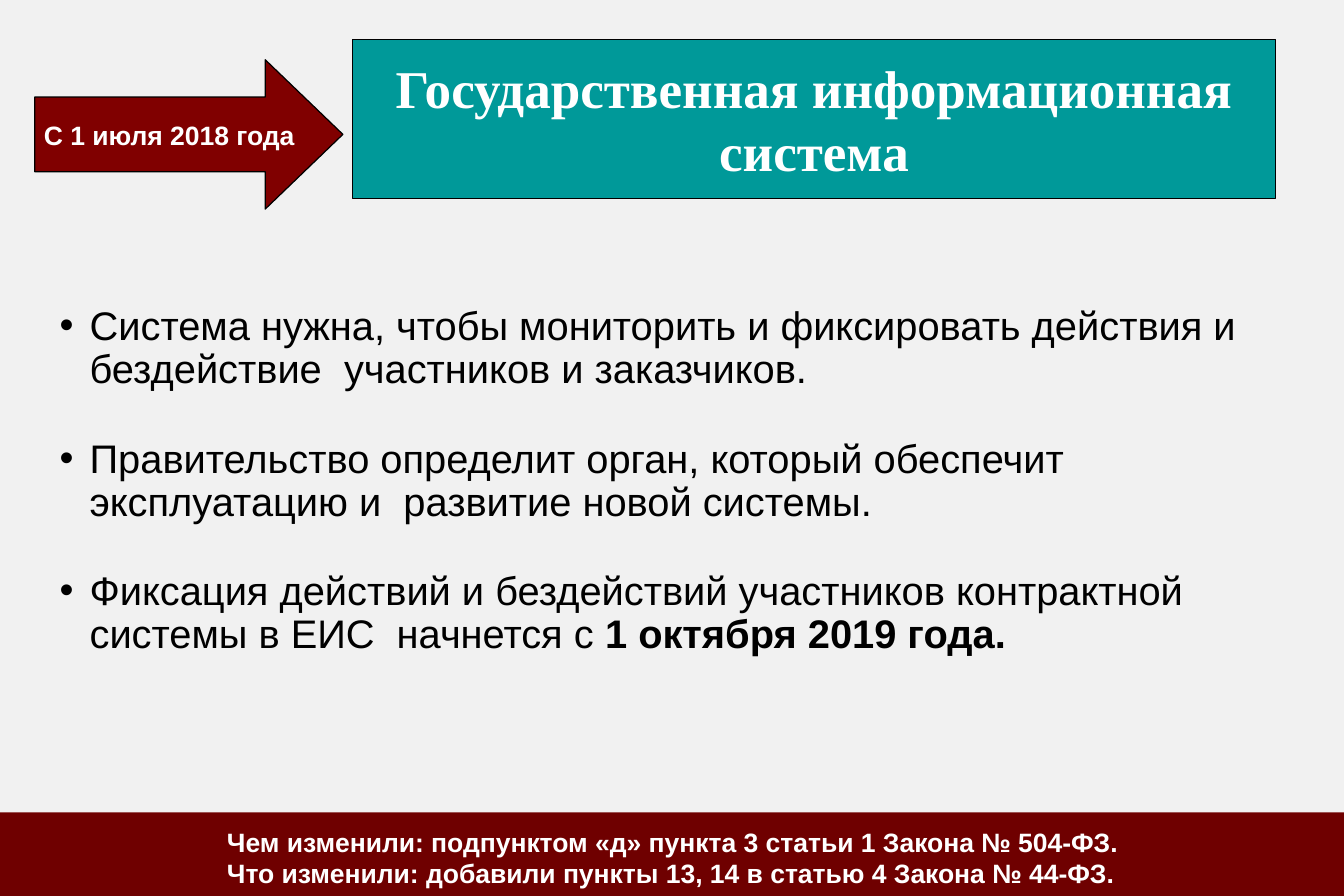
import dataclasses

import lxml.etree
import pptx
import pptx.dml.color
import pptx.enum.shapes
import pptx.enum.text
import pptx.oxml.ns
import pptx.util

Inches = pptx.util.Inches
Pt = pptx.util.Pt
qn = pptx.oxml.ns.qn
ALIGN = pptx.enum.text.PP_ALIGN
ANCHOR = pptx.enum.text.MSO_ANCHOR
SHAPE = pptx.enum.shapes.MSO_SHAPE

COLOURS = {
    "background": "F1F1F1",
    "footer": "6F0000",
    "title": "009999",
    "arrow": "800000",
    "black": "000000",
    "white": "FFFFFF",
}


@dataclasses.dataclass(frozen=True)
class Box:
    left: float
    top: float
    width: float
    height: float


@dataclasses.dataclass(frozen=True)
class Bullet:
    text: str
    space_before: float
    bold_ending: str = ""


TITLE_BOX = Box(2.95, 0.33, 7.73, 1.33)
ARROW_BOX = Box(0.29, 0.5, 2.58, 1.25)
BODY_BOX = Box(0.49, 2.5, 10.41, 3.02)
FOOTER_BOX = Box(0, 6.8, 11.25, 0.7)
FOOTER_TEXT_BOX = Box(1.9, 6.89, 8.44, 0.55)

BULLETS = [
    Bullet("Система нужна, чтобы мониторить и фиксировать действия и "
           "бездействие  участников и заказчиков.", 4.2),
    Bullet("Правительство определит орган, который обеспечит "
           "эксплуатацию и  развитие новой системы.", 28.1),
    Bullet("Фиксация действий и бездействий участников контрактной "
           "системы в ЕИС  начнется с ", 27.6, "1 октября 2019 года."),
]
FOOTER_LINES = [
    "Чем изменили: подпунктом «д» пункта 3 статьи 1 Закона № 504-ФЗ.",
    "Что изменили: добавили пункты 13, 14 в статью 4 Закона № 44-ФЗ.",
]


def colour(name: str) -> pptx.dml.color.RGBColor:
    return pptx.dml.color.RGBColor.from_string(COLOURS[name])


def place(shape, box: Box) -> None:
    shape.left, shape.top = Inches(box.left), Inches(box.top)
    shape.width, shape.height = Inches(box.width), Inches(box.height)


def paint(shape, fill: str, outlined: bool = True) -> None:
    shape.fill.solid()
    shape.fill.fore_color.rgb = colour(fill)
    if outlined:
        shape.line.color.rgb = colour("black")
        shape.line.width = Pt(0.75)
    else:
        shape.line.fill.background()


def add_shape(slide, kind, box: Box, fill: str, outlined: bool = True):
    shape = slide.shapes.add_shape(
        kind, Inches(box.left), Inches(box.top), Inches(box.width), Inches(box.height))
    shape.shadow.inherit = False
    paint(shape, fill, outlined)
    return shape


def prepare_frame(frame, anchor, wrap: bool = True, top_margin: float | None = None) -> None:
    """Set the frame's layout; a given top margin makes the other margins zero."""
    frame.auto_size = pptx.enum.text.MSO_AUTO_SIZE.NONE
    frame.word_wrap = wrap
    frame.vertical_anchor = anchor
    if top_margin is not None:
        frame.margin_left = frame.margin_right = frame.margin_bottom = 0
        frame.margin_top = Inches(top_margin)


def next_paragraph(frame, index: int):
    return frame.paragraphs[0] if index == 0 else frame.add_paragraph()


def write(paragraph, text: str, *, size: float, font: str = "Arial", fill: str = "white",
          bold: bool = True, align=ALIGN.LEFT) -> None:
    paragraph.alignment = align
    run = paragraph.add_run()
    run.text = text
    run.font.name = font
    run.font.size = Pt(size)
    run.font.bold = bold
    run.font.color.rgb = colour(fill)


def add_bullet_mark(paragraph) -> None:
    properties = paragraph._p.get_or_add_pPr()
    properties.set("marL", str(Inches(0.26)))
    properties.set("indent", str(Inches(-0.25)))
    lxml.etree.SubElement(properties, qn("a:buChar")).set("char", "•")


def fill_title(title) -> None:
    place(title, TITLE_BOX)
    geometry = lxml.etree.SubElement(title._element.spPr, qn("a:prstGeom"), prst="roundRect")
    lxml.etree.SubElement(geometry, qn("a:avLst"))
    paint(title, "title")
    prepare_frame(title.text_frame, ANCHOR.MIDDLE)
    write(title.text_frame.paragraphs[0], "Государственная информационная система",
          size=32, font="Times New Roman", align=ALIGN.CENTER)


def fill_body(body) -> None:
    place(body, BODY_BOX)
    prepare_frame(body.text_frame, ANCHOR.TOP, top_margin=0.06)
    for index, bullet in enumerate(BULLETS):
        paragraph = next_paragraph(body.text_frame, index)
        paragraph.line_spacing = Pt(25.9)
        paragraph.space_before = Pt(bullet.space_before)
        add_bullet_mark(paragraph)
        write(paragraph, bullet.text, size=24, fill="black", bold=False)
        if bullet.bold_ending:
            write(paragraph, bullet.bold_ending, size=24, fill="black")


def add_arrow(slide) -> None:
    arrow = add_shape(slide, SHAPE.RIGHT_ARROW, ARROW_BOX, "arrow")
    arrow.adjustments[1] = 0.52
    prepare_frame(arrow.text_frame, ANCHOR.MIDDLE, wrap=False)
    write(arrow.text_frame.paragraphs[0], "С 1 июля 2018 года", size=16, align=ALIGN.CENTER)


def add_footer(slide) -> None:
    add_shape(slide, SHAPE.RECTANGLE, FOOTER_BOX, "footer", outlined=False)
    text_box = slide.shapes.add_textbox(0, 0, 0, 0)
    place(text_box, FOOTER_TEXT_BOX)
    prepare_frame(text_box.text_frame, ANCHOR.TOP, top_margin=0.02)
    for index, line in enumerate(FOOTER_LINES):
        write(next_paragraph(text_box.text_frame, index), line, size=16)


def main() -> None:
    presentation = pptx.Presentation()
    presentation.slide_width = Inches(11.25)
    presentation.slide_height = Inches(7.5)
    slide = presentation.slides.add_slide(presentation.slide_layouts[1])
    slide.background.fill.solid()
    slide.background.fill.fore_color.rgb = colour("background")
    fill_title(slide.shapes.title)
    fill_body(slide.placeholders[1])
    add_arrow(slide)
    add_footer(slide)
    presentation.save("out.pptx")


if __name__ == "__main__":
    main()
